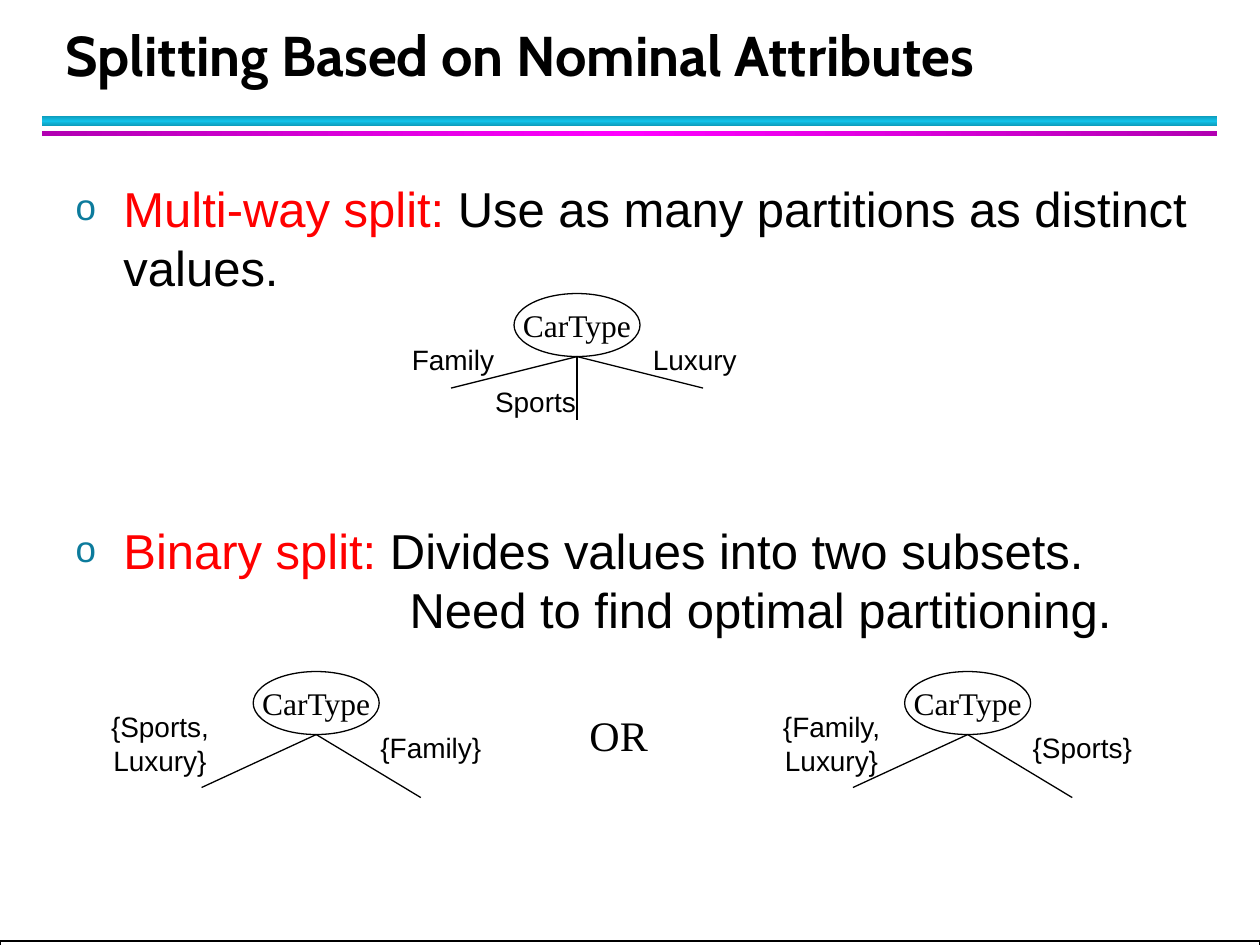
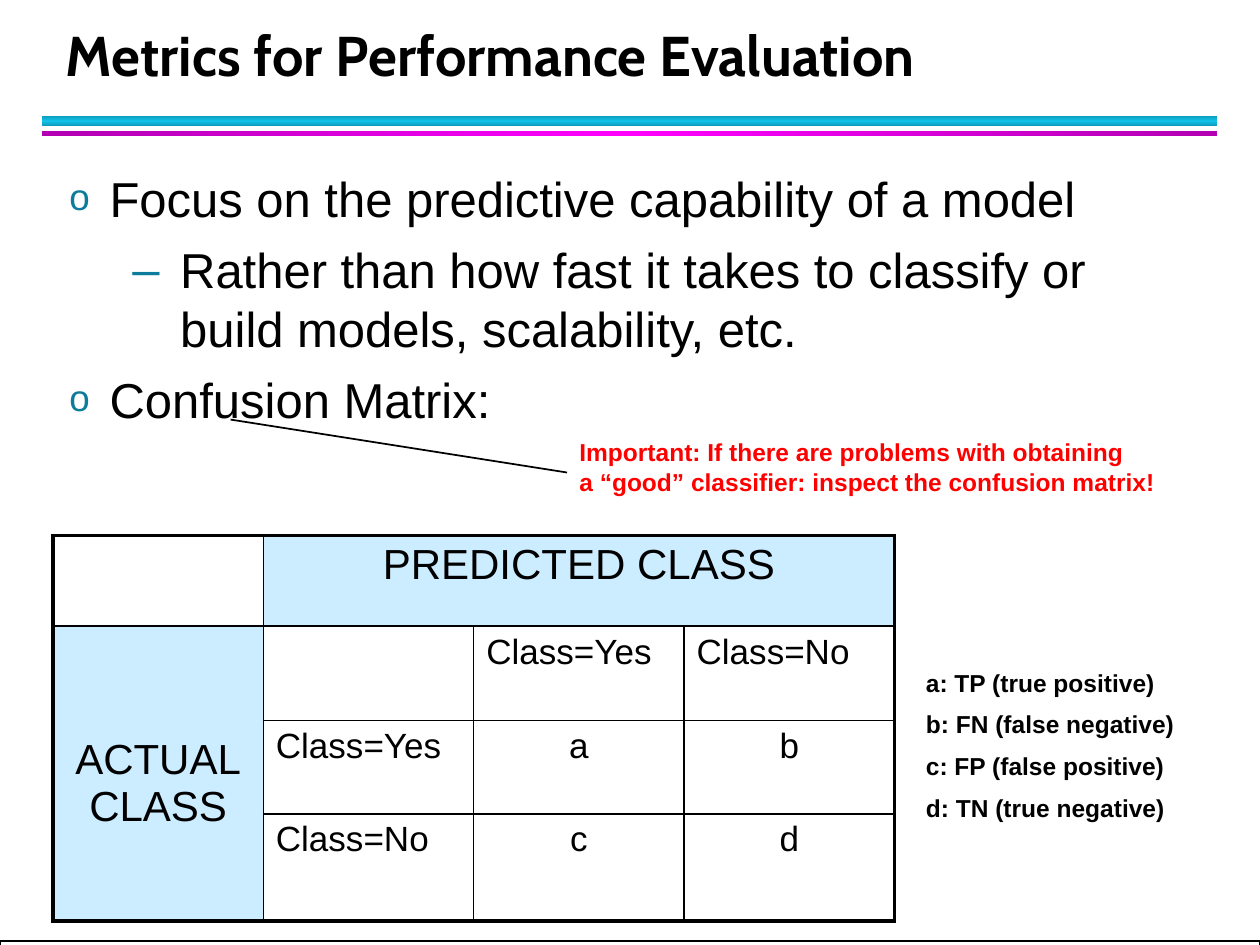
from copy import deepcopy

from lxml.etree import SubElement
from pptx import Presentation
from pptx.dml.color import RGBColor
from pptx.enum.shapes import MSO_CONNECTOR as Connector, MSO_SHAPE as Preset
from pptx.enum.text import MSO_ANCHOR as Anchor, MSO_AUTO_SIZE as AutoSize, PP_ALIGN as Align
from pptx.oxml.ns import qn
from pptx.util import Emu, Pt

EMU_PER_PX = 9144  # 100 px to the inch
COLOURS = {
    "ink": "000000",
    "paper": "FFFFFF",
    "alert": "FF0000",
    "bullet": "0C7B9C",
    "header": "CCECFF",
    "teal edge": "0E9BBA",
    "teal": "12C2E9",
    "magenta edge": "B200B2",
    "magenta": "FF00FF",
}
BODY_SIZE = 28


def px(length):
    return Emu(length * EMU_PER_PX)


def rgb(name):
    return RGBColor.from_string(COLOURS[name])


class Deck:
    """Holds the shared style and the slide being built."""

    def __init__(self):
        self.presentation = Presentation()
        self.presentation.slide_width = px(1000)
        self.presentation.slide_height = px(750)
        self.slide = None

    def start_slide(self, title, title_width):
        layout = self.presentation.slide_layouts[1]
        self.slide = self.presentation.slides.add_slide(layout)
        self.band((33, 92, 933, 8), "teal edge", "teal", 90)
        self.band((33, 104, 933, 4), "magenta edge", "magenta", 0)
        self.shape(Preset.RECTANGLE, (0, 747, 1000, 33), line_width=1)
        frame = self.place(self.slide.shapes.title, (42, 17, title_width, 58), Anchor.BOTTOM)
        frame.text = title
        paragraph = frame.paragraphs[0]
        paragraph.line_spacing = Pt(36)
        self.style(paragraph, 32, "Cabin", bold=True)

    def place(self, shape, box, anchor):
        shape.left, shape.top, shape.width, shape.height = map(px, box)
        frame = shape.text_frame
        frame.auto_size = AutoSize.NONE
        frame.word_wrap = True
        frame.vertical_anchor = anchor
        return frame

    def style(self, paragraph, size, font="Arial", colour="ink", bold=False, align=Align.LEFT):
        paragraph.alignment = align
        paragraph.font.size = Pt(size)
        paragraph.font.name = font
        paragraph.font.bold = bold
        paragraph.font.color.rgb = rgb(colour)

    def shape(self, preset, box, line_width):
        shape = self.slide.shapes.add_shape(preset, *map(px, box))
        shape.shadow.inherit = False
        shape.fill.solid()
        shape.fill.fore_color.rgb = rgb("paper")
        shape.line.color.rgb = rgb("ink")
        shape.line.width = Pt(line_width)
        return shape

    def band(self, box, edge, middle, angle):
        band = self.shape(Preset.RECTANGLE, box, line_width=1)
        band.line.fill.background()
        band.fill.gradient()
        stop_list = band._element.spPr.find(".//" + qn("a:gsLst"))
        stop_list.insert(1, deepcopy(stop_list[0]))
        for stop, position, colour in zip(band.fill.gradient_stops, (0, 0.5, 1), (edge, middle, edge)):
            stop.position = position
            stop.color.rgb = rgb(colour)
        band.fill.gradient_angle = angle

    def line(self, start, end, width=0.75):
        connector = self.slide.shapes.add_connector(Connector.STRAIGHT, *map(px, start + end))
        connector.line.color.rgb = rgb("ink")
        connector.line.width = Pt(width)
        SubElement(connector._element.spPr, qn("a:effectLst"))

    def text(self, box, lines, size, anchor=Anchor.TOP, gap=0, wrap=False, **style):
        frame = self.slide.shapes.add_textbox(*map(px, box)).text_frame
        frame.word_wrap = wrap
        frame.vertical_anchor = anchor
        frame.text = "\n".join(lines)
        for index, paragraph in enumerate(frame.paragraphs):
            paragraph.space_before = Pt(gap if index else 0)
            self.style(paragraph, size, **style)

    def body(self, box, items):
        """Each item: runs of (text, colour), bullet, text indent, hanging, space before, level."""
        frame = self.place(self.slide.placeholders[1], box, Anchor.TOP)
        for index, (runs, bullet, indent, hanging, before, level) in enumerate(items):
            paragraph = frame.add_paragraph() if index else frame.paragraphs[0]
            paragraph.level = level
            self.bullet(paragraph, bullet, indent, hanging)
            paragraph.space_before = Pt(before)
            paragraph.space_after = Pt(4 if bullet and before != GAP_FOR_TREE else 0)
            self.style(paragraph, BODY_SIZE)
            for text, colour in runs:
                run = paragraph.add_run()
                run.text = text
                run.font.color.rgb = rgb(colour)

    def bullet(self, paragraph, character, indent, hanging):
        properties = paragraph._p.get_or_add_pPr()
        properties.set("marL", str(px(indent)))
        properties.set("indent", str(px(-hanging)))
        if not character:
            SubElement(properties, qn("a:buNone"))
            return
        colour = SubElement(properties, qn("a:buClr"))
        SubElement(colour, qn("a:srgbClr"), val=COLOURS["bullet"])
        percent = "75000" if character == "o" else "100000"
        SubElement(properties, qn("a:buSzPct"), val=percent)
        SubElement(properties, qn("a:buChar"), char=character)

    def tree(self, left, top, branches):
        """Each branch: line end from the oval's foot, label, label box from the oval's corner."""
        oval = self.shape(Preset.OVAL, (left, top, 100, 50), line_width=0.75)
        frame = oval.text_frame
        frame.word_wrap = False
        frame.vertical_anchor = Anchor.MIDDLE
        frame.text = "CarType"
        self.style(frame.paragraphs[0], 18, "Times New Roman", align=Align.CENTER)
        foot = (left + 50, top + 50)
        for (across, down), label, (x, y, width, height) in branches:
            self.line(foot, (foot[0] + across, foot[1] + down))
            self.text((left + x, top + y, width, height), [label], 16,
                      anchor=Anchor.MIDDLE, align=Align.CENTER)

    def table(self, box, row_heights, merges, cells, filled):
        """Cells map (row, column) to (text, size, alignment)."""
        rows, columns = len(row_heights), 4
        frame = self.slide.shapes.add_table(rows, columns, *map(px, box))
        table = frame.table
        table.first_row = table.horz_banding = False
        for row, height in zip(table.rows, row_heights):
            row.height = px(height)
        for first, last in merges:
            table.cell(*first).merge(table.cell(*last))
        for row in range(rows):
            for column in range(columns):
                cell = table.cell(row, column)
                right = column + (cell.span_width if cell.is_merge_origin else 1)
                bottom = row + (cell.span_height if cell.is_merge_origin else 1)
                self.borders(cell, L=column == 0, R=right == columns, T=row == 0, B=bottom == rows)
                if (row, column) in filled:
                    cell.fill.solid()
                    cell.fill.fore_color.rgb = rgb("header")
                else:
                    cell.fill.background()
                if (row, column) in cells:
                    text, size, align = cells[row, column]
                    cell.text = text
                    self.style(cell.text_frame.paragraphs[0], size, align=align)
        return table

    def borders(self, cell, **outer_sides):
        properties = cell._tc.get_or_add_tcPr()
        for side, outer in outer_sides.items():
            width = Pt(2.25 if outer else 1)
            border = SubElement(properties, qn("a:ln" + side), w=str(width))
            fill = SubElement(border, qn("a:solidFill"))
            SubElement(fill, qn("a:srgbClr"), val=COLOURS["ink"])


GAP_FOR_TREE = 124  # points left free for the tree under the first item


def build_splitting(deck):
    deck.start_slide("Splitting Based on Nominal Attributes", 942)
    deck.body((50, 137, 917, 408), [
        ([("Multi-way split:", "alert"),
          (" Use as many partitions as distinct values.", "ink")], "o", 38, 38, 0, 0),
        ([("Binary split:", "alert"),
          (" Divides values into two subsets.", "ink")], "o", 38, 38, GAP_FOR_TREE, 0),
        ([("Need to find optimal partitioning.", "ink")], None, 265, 0, 0, 0),
    ])

    # Multi-way tree
    deck.tree(408, 233, [
        ((-100, 25), "Family", (-91, 34, 85, 37)),
        ((0, 50), "Sports", (-25, 67, 84, 37)),
        ((100, 25), "Luxury", (100, 34, 87, 37)),
    ])

    # Two binary trees
    for left, pair, pair_x, single in ((201, "{Sports,\vLuxury}", -126, "{Family}"),
                                       (718, "{Family,\vLuxury}", -110, "{Sports}")):
        deck.tree(left, 533, [
            ((-91, 42), pair, (pair_x, 25, 104, 64)),
            ((83, 50), single, (91, 42, 100, 37)),
        ])
    deck.text((458, 558, 66, 50), ["OR"], 24, anchor=Anchor.MIDDLE,
              font="Times New Roman", align=Align.CENTER)


def build_metrics(deck):
    deck.start_slide("Metrics for Performance Evaluation", 906)
    deck.body((45, 129, 910, 563), [
        ([("Focus on the predictive capability of a model", "ink")], "o", 32, 32, 0, 0),
        ([("Rather than how fast it takes to classify or build models, scalability, etc.", "ink")],
         "–", 88, 38, 3, 1),
        ([("Confusion Matrix:", "ink")], "o", 32, 32, 3, 0),
    ])

    # Confusion matrix
    cells = {
        (0, 1): ("PREDICTED CLASS", 24, Align.CENTER),
        (1, 0): ("ACTUAL\vCLASS", 24, Align.CENTER),
    }
    for index, name in enumerate(("Class=Yes", "Class=No"), start=2):
        cells[1, index] = cells[index, 1] = (name, 20, Align.LEFT)
    for index, letter in enumerate("abcd"):
        cells[2 + index // 2, 2 + index % 2] = (letter, 20, Align.CENTER)
    matrix = deck.table((42, 425, 668, 306), (72, 75, 74, 85),
                        [((0, 1), (0, 3)), ((1, 0), (3, 0))], cells, {(0, 1), (1, 0)})
    actual = matrix.cell(1, 0)
    actual.vertical_anchor = Anchor.MIDDLE
    actual.margin_top = px(21)

    # Legend and warning
    deck.text((725, 525, 242, 138), [
        "a: TP (true positive)",
        "b: FN (false negative)",
        "c: FP (false positive)",
        "d: TN (true negative)",
    ], 14, gap=7, wrap=True, bold=True)
    deck.text((450, 342, 484, 57), [
        "Important: If there are problems with obtaining",
        "a “good” classifier: inspect the confusion matrix!",
    ], 14, colour="alert", bold=True)
    deck.line((183, 333), (450, 375), width=1)


def main():
    deck = Deck()
    build_splitting(deck)
    build_metrics(deck)
    deck.presentation.save("out.pptx")


if __name__ == "__main__":
    main()
